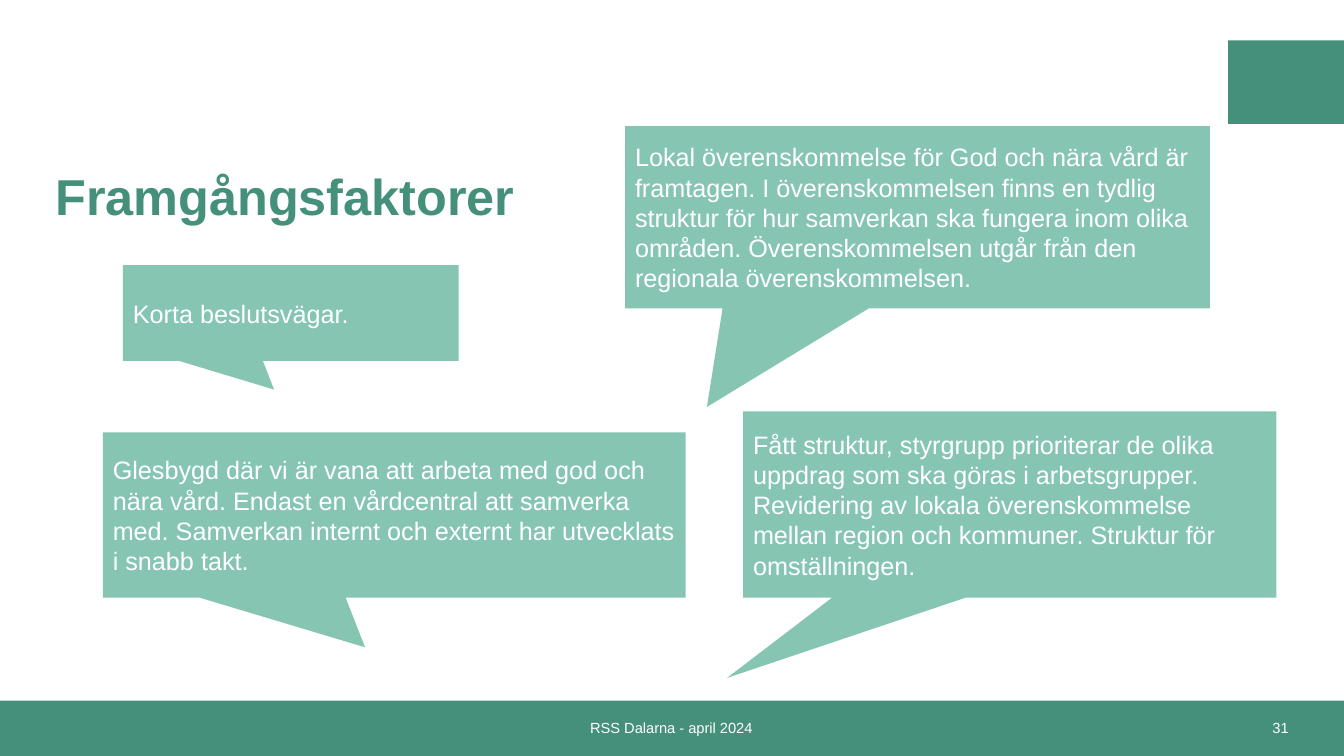
from pptx import Presentation
from pptx.dml.color import RGBColor
from pptx.enum.shapes import MSO_SHAPE
from pptx.enum.text import MSO_ANCHOR, PP_ALIGN
from pptx.util import Pt

PX = 9144
HUE = {"dark": "45907A", "mint": "87C5B3", "white": "FFFFFF"}


def block(kind, box, hue):
    shape = slide.shapes.add_shape(kind, *[n * PX for n in box])
    shape.shadow.inherit = False
    shape.fill.solid()
    shape.fill.fore_color.rgb = RGBColor.from_string(HUE[hue])
    shape.line.fill.background()
    return shape


def write(shape, text, size, hue, align=PP_ALIGN.LEFT, bold=False):
    frame = shape.text_frame
    frame.text = text
    frame.word_wrap = True
    frame.vertical_anchor = MSO_ANCHOR.MIDDLE
    para = frame.paragraphs[0]
    para.alignment = align
    para.font.name = "Arial"
    para.font.size = Pt(size)
    para.font.bold = bold
    para.font.color.rgb = RGBColor.from_string(HUE[hue])
    return para


deck = Presentation()
deck.slide_width = 1333 * PX
deck.slide_height = 750 * PX
slide = deck.slides.add_slide(deck.slide_layouts[5])

for box in [(0, 695, 1333, 55), (1218, 40, 115, 83)]:
    block(MSO_SHAPE.RECTANGLE, box, "dark")

title = slide.shapes.title
title.left, title.top, title.width, title.height = [n * PX for n in (45, 132, 1139, 132)]
write(title, "Framgångsfaktorer", 36, "dark", bold=True).line_spacing = 0.9

notes = [
    ("RSS Dalarna - april 2024", 391, 550, PP_ALIGN.CENTER),
    ("31", 988, 300, PP_ALIGN.RIGHT),
]
for text, left, width, align in notes:
    label = slide.shapes.add_textbox(left * PX, 695 * PX, width * PX, 54 * PX)
    write(label, text, 10.5, "white", align)

bubbles = [
    ((122, 263, 333, 95), (-0.05, 0.8), "Korta beslutsvägar."),
    (
        (737, 408, 529, 185),
        (-0.53, 0.93),
        "Fått struktur, styrgrupp prioriterar de olika uppdrag som ska göras i "
        "arbetsgrupper. Revidering av lokala överenskommelse mellan region och "
        "kommuner. Struktur för omställningen.",
    ),
    (
        (620, 125, 580, 181),
        (-0.36, 1.04),
        "Lokal överenskommelse för God och nära vård är framtagen. I "
        "överenskommelsen finns en tydlig struktur för hur samverkan ska fungera "
        "inom olika områden. Överenskommelsen utgår från den regionala "
        "överenskommelsen.",
    ),
    (
        (102, 429, 578, 164),
        (-0.05, 0.8),
        "Glesbygd där vi är vana att arbeta med god och nära vård. Endast en "
        "vårdcentral att samverka med. Samverkan internt och externt har "
        "utvecklats i snabb takt.",
    ),
]
for box, tip, text in bubbles:
    bubble = block(MSO_SHAPE.RECTANGULAR_CALLOUT, box, "mint")
    bubble.adjustments[0], bubble.adjustments[1] = tip
    write(bubble, text, 18, "white")

deck.save("out.pptx")
